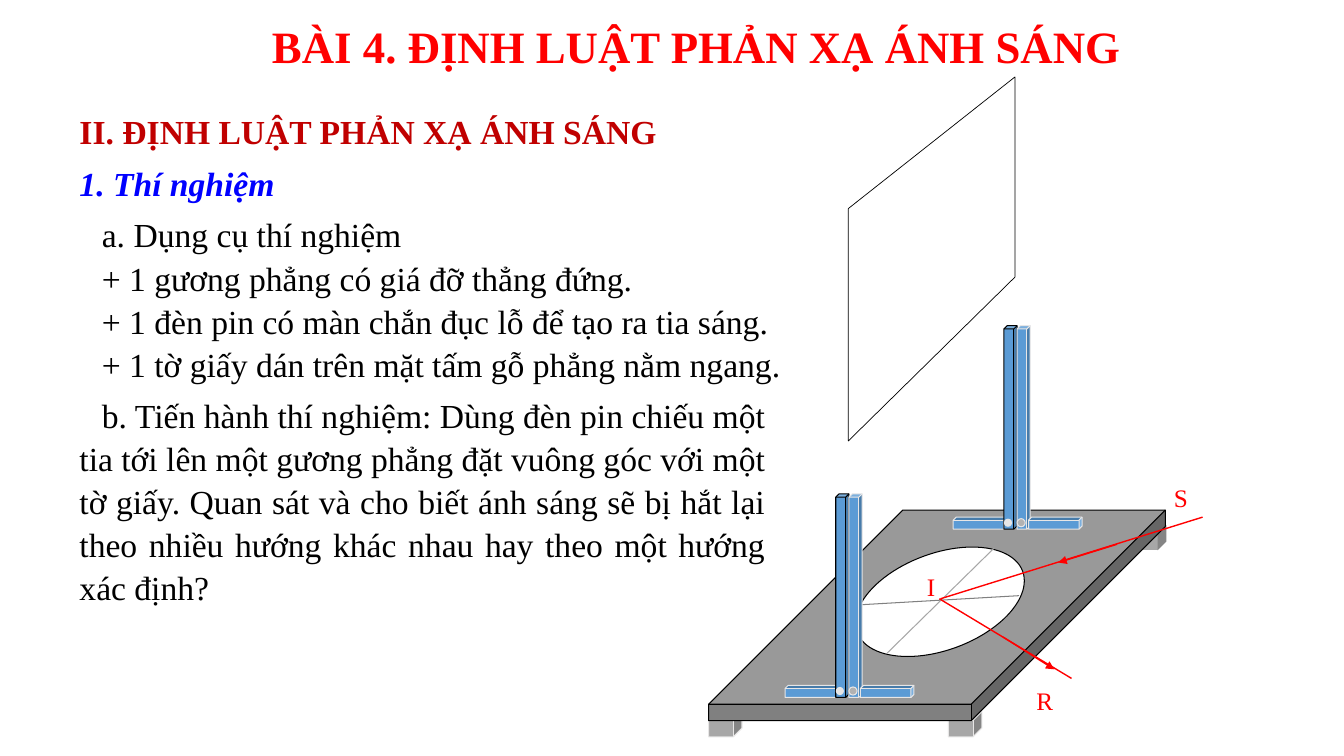
from pptx import Presentation
from pptx.dml.color import RGBColor
from pptx.enum import shapes, text
from pptx.oxml import ns, xmlchemy
from pptx.util import Pt

BLACK = RGBColor(0, 0, 0)
WHITE = RGBColor(0xFF, 0xFF, 0xFF)
RED = RGBColor(0xFF, 0, 0)
DARK_RED = RGBColor(0xC0, 0, 0)
BLUE = RGBColor(0, 0, 0xFF)
STEEL = RGBColor(0x5B, 0x9B, 0xD5)
PALE = RGBColor(0xE7, 0xE6, 0xE6)
SILVER = RGBColor(0xB2, 0xB2, 0xB2)
LEG_GRAY = RGBColor(0xA7, 0xA7, 0xA7)
BOARD_GRAY = RGBColor(0x80, 0x80, 0x80)
FONT = "Times New Roman"
CENTER, JUSTIFY = text.PP_ALIGN.CENTER, text.PP_ALIGN.JUSTIFY
CUBE, OVAL = shapes.MSO_SHAPE.CUBE, shapes.MSO_SHAPE.OVAL

TITLE = "BÀI 4. ĐỊNH LUẬT PHẢN XẠ ÁNH SÁNG"
SECTION = "II. ĐỊNH LUẬT PHẢN XẠ ÁNH SÁNG"
SUBSECTION = "1. Thí nghiệm"
TOOLS = [
    "a. Dụng cụ thí nghiệm",
    "+ 1 gương phẳng có giá đỡ thẳng đứng.",
    "+ 1 đèn pin có màn chắn đục lỗ để tạo ra tia sáng.",
    "+ 1 tờ giấy dán trên mặt tấm gỗ phẳng nằm ngang.",
]
PROCEDURE = (
    "b. Tiến hành thí nghiệm: Dùng đèn pin chiếu một tia tới lên một gương phẳng "
    "đặt vuông góc với một tờ giấy. Quan sát và cho biết ánh sáng sẽ bị hắt lại "
    "theo nhiều hướng khác nhau hay theo một hướng xác định?"
)
POINT_LABELS = [("S", 828.7, 341.3), ("I", 650.2, 404.6), ("R", 731.5, 486)]

LEGS = [(809.3, 375.1, None), (677.5, 508.3, PALE), (506.2, 508.3, PALE)]
BOARD = (506.2, 364.3, 326.2, 150.5)
PAPER = (608.4, 395.3, 126, 69.1)
MIRROR = [(605.5, 314.6), (725, 198), (725, 55.4), (605.5, 149)]
PAPER_LINES = [((614.2, 432), (727.9, 425.5), BOARD_GRAY),
               ((709.9, 391.7), (633.6, 466.6), LEG_GRAY)]
RAYS = [((671.8, 427.7), (859, 369.4), False),
        ((797.8, 388.8), (756, 401.8), True),
        ((671, 427.7), (765.4, 484.6), False),
        ((716.4, 455), (753.1, 478.1), True)]
STANDS = [(717.1, 232.6), (597, 352.8)]
POST_WIDTH, POST_HEIGHT = 9.4, 145.4
FOOT_OFFSETS, FOOT_TOP = (-21.4, 32.4), 122
SCREW_TOP, SCREW_SIZE = 137.9, 5.8


def add_text(paragraphs, left, top, width, height, size, color, align,
             bold=False, italic=False, spacing=None, indent=0, wrap=True):
    box = slide.shapes.add_textbox(Pt(left), Pt(top), Pt(width), Pt(height))
    frame = box.text_frame
    frame.word_wrap = wrap
    for number, words in enumerate(paragraphs):
        paragraph = frame.add_paragraph() if number else frame.paragraphs[0]
        paragraph.alignment = align
        paragraph.line_spacing = spacing
        if indent:
            properties = paragraph._p.get_or_add_pPr()
            properties.set("marL", "0")
            properties.set("indent", str(Pt(indent)))
        run = paragraph.add_run()
        run.text = words
        font = run.font
        font.name, font.size = FONT, Pt(size)
        font.bold, font.italic = bold, italic
        font.color.rgb = color


def paint(part, fill, line, weight=0.75):
    part.shadow.inherit = False
    part.fill.solid()
    part.fill.fore_color.rgb = fill
    if line is None:
        part.line.fill.background()
    else:
        part.line.color.rgb = line
        part.line.width = Pt(weight)


def add_part(kind, left, top, width, height, fill, line, depth=None):
    part = slide.shapes.add_shape(kind, Pt(left), Pt(top), Pt(width), Pt(height))
    paint(part, fill, line)
    if depth is not None:
        part.adjustments[0] = depth
    return part


def add_line(start, end, color, weight, arrow=False):
    line = slide.shapes.add_connector(
        shapes.MSO_CONNECTOR.STRAIGHT, *map(Pt, start + end))
    line.line.color.rgb = color
    line.line.width = Pt(weight)
    if arrow:
        head = xmlchemy.OxmlElement("a:tailEnd")
        head.set("type", "triangle")
        line.line._get_or_add_ln().append(head)
    line._element.spPr.append(xmlchemy.OxmlElement("a:effectLst"))


def add_foot(left, top):
    foot = add_part(CUBE, left, top, 8.6, 38.2, STEEL, PALE, 0.25)
    foot.rotation = 270
    foot._element.spPr.find(ns.qn("a:xfrm")).set("flipV", "1")


def add_stand(left, top):
    add_foot(left + FOOT_OFFSETS[0], top + FOOT_TOP)
    for column, edge in enumerate((BLACK, PALE)):
        add_part(CUBE, left + column * POST_WIDTH, top, POST_WIDTH, POST_HEIGHT,
                 STEEL, edge, 0.25)
    add_foot(left + FOOT_OFFSETS[1], top + FOOT_TOP)
    for column, fill, edge in ((1, SILVER, PALE), (0, PALE, None)):
        add_part(OVAL, left + column * POST_WIDTH, top + SCREW_TOP,
                 SCREW_SIZE, SCREW_SIZE, fill, edge)


def add_mirror():
    outline = slide.shapes.build_freeform(*MIRROR[0], scale=Pt(1))
    outline.add_line_segments(MIRROR[1:], close=True)
    mirror = outline.convert_to_shape()
    paint(mirror, WHITE, BLACK, 0.5)
    alpha = xmlchemy.OxmlElement("a:alpha")
    alpha.set("val", "63000")
    mirror._element.spPr.find(ns.qn("a:solidFill"))[0].append(alpha)


deck = Presentation()
deck.slide_width, deck.slide_height = Pt(960), Pt(540)
slide = deck.slides.add_slide(deck.slide_layouts[6])

add_text([TITLE], 82.8, 10.1, 829.4, 46.1, 32, RED, CENTER, bold=True)
add_text([SECTION], 49.7, 75.6, 454.3, 36, 24, DARK_RED, JUSTIFY, bold=True)
add_text([SUBSECTION], 49.7, 110.9, 154.8, 36, 24, BLUE, JUSTIFY,
         bold=True, italic=True, spacing=1.07, wrap=False)
add_text(TOOLS, 49.7, 147.6, 530.6, 131.8, 24, BLACK, JUSTIFY,
         spacing=1.07, indent=16)
add_text([PROCEDURE], 49.7, 276.5, 504, 162.7, 24, BLACK, JUSTIFY,
         spacing=1.07, indent=16)

for left, top, edge in LEGS:
    add_part(CUBE, left, top, 23.8, 18, LEG_GRAY, edge, 0.345)
add_part(CUBE, *BOARD, BOARD_GRAY, BLACK, 0.922)
add_part(OVAL, *PAPER, WHITE, BLACK).rotation = 339.7
add_mirror()
for start, end, color in PAPER_LINES:
    add_line(start, end, color, 0.75)
for start, end, arrow in RAYS:
    add_line(start, end, RED, 1, arrow)
for left, top in STANDS:
    add_stand(left, top)
for letter, left, top in POINT_LABELS:
    add_text([letter], left, top, 29.5, 28.8, 18, RED, CENTER)

deck.save("out.pptx")
